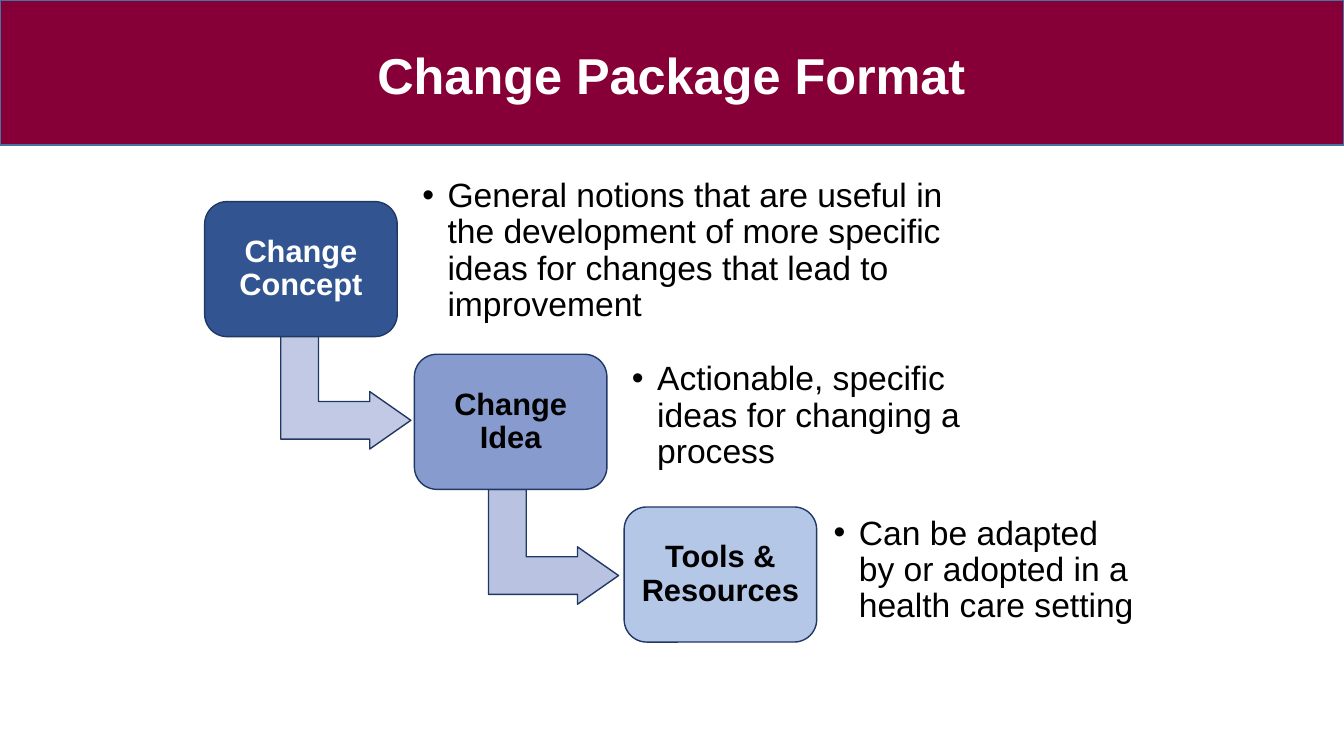
from lxml import etree
from pptx import Presentation
from pptx.dml.color import RGBColor
from pptx.enum.shapes import MSO_SHAPE
from pptx.enum.text import MSO_ANCHOR, PP_ALIGN
from pptx.oxml.ns import qn
from pptx.util import Inches, Pt

RECTANGLE = MSO_SHAPE.RECTANGLE
ROUNDED = MSO_SHAPE.ROUNDED_RECTANGLE
BENT_ARROW = MSO_SHAPE.BENT_UP_ARROW
MIDDLE = MSO_ANCHOR.MIDDLE
CENTER, LEFT = PP_ALIGN.CENTER, PP_ALIGN.LEFT

WHITE = RGBColor(0xFF, 0xFF, 0xFF)
BLACK = RGBColor(0x00, 0x00, 0x00)
MAROON = RGBColor(0x86, 0x00, 0x37)
BANNER_LINE = RGBColor(0x43, 0x73, 0x9E)
NAVY = RGBColor(0x20, 0x38, 0x64)
DARK_BLUE = RGBColor(0x32, 0x54, 0x91)
MID_BLUE = RGBColor(0x87, 0x9B, 0xCE)
LIGHT_BLUE = RGBColor(0xB4, 0xC7, 0xE7)
PALE_ARROW = RGBColor(0xC1, 0xC9, 0xE4)
SOFT_ARROW = RGBColor(0xB9, 0xC2, 0xE1)

# Staircase grid, in inches
FIRST_LEFT, FIRST_TOP = 2.03, 2
STEP_RIGHT, STEP_DOWN = 2.08, 1.515
BOX_WIDTH, BOX_HEIGHT = 1.91, 1.34
ARROW_WIDTH, ARROW_HEIGHT = 1.14, 1.29

# Label, box fill, label colour, description, description frame
STEPS = [
    ("Change Concept", DARK_BLUE, WHITE,
     "General notions that are useful in the development of more specific "
     "ideas for changes that lead to improvement", (4.09, 1.95, 5.59, 1.08)),
    ("Change Idea", MID_BLUE, BLACK,
     "Actionable, specific ideas for changing a process",
     (6.17, 3.59, 3.66, 1.08)),
    ("Tools & Resources", LIGHT_BLUE, BLACK,
     "Can be adapted by or adopted in a health care setting",
     (8.17, 4.95, 3.22, 1.42)),
]
# Left, top and fill of the arrow that leaves each step
ARROWS = [(2.86, 3.24, PALE_ARROW), (4.92, 4.78, SOFT_ARROW)]

deck = Presentation()
deck.slide_width, deck.slide_height = Inches(13.33), Inches(7.5)
page = deck.slides.add_slide(deck.slide_layouts[6])


def add_outlined(kind, frame, fill, line):
    shape = page.shapes.add_shape(kind, *map(Inches, frame))
    shape.shadow.inherit = False
    shape.fill.solid()
    shape.fill.fore_color.rgb = fill
    shape.line.color.rgb = line
    shape.line.width = Pt(1)
    return shape


def write(box, text, size, color, bold, align, inset):
    """Put one vertically centred paragraph into a box and return it."""
    frame = box.text_frame
    frame.text = text
    frame.word_wrap = True
    frame.vertical_anchor = MIDDLE
    frame.margin_left = frame.margin_right = Inches(inset)
    frame.margin_top = frame.margin_bottom = Inches(min(inset, 0.1))
    para = frame.paragraphs[0]
    para.alignment = align
    para.line_spacing = 0.9
    font = para.runs[0].font
    font.name, font.size, font.bold = "Arial", Pt(size), bold
    font.color.rgb = color
    return para


add_outlined(RECTANGLE, (0, 0, 13.33, 1.44), MAROON, BANNER_LINE)

for index, (label, fill, label_color, description, frame) in enumerate(STEPS):
    if index < len(ARROWS):
        left, top, arrow_fill = ARROWS[index]
        arrow = add_outlined(BENT_ARROW, (left, top, ARROW_WIDTH, ARROW_HEIGHT),
                             arrow_fill, NAVY)
        arrow.rotation = 90
        for number, value in enumerate((0.328, 0.25, 0.358)):
            arrow.adjustments[number] = value

    box = add_outlined(ROUNDED, (FIRST_LEFT + index * STEP_RIGHT,
                                 FIRST_TOP + index * STEP_DOWN,
                                 BOX_WIDTH, BOX_HEIGHT), fill, NAVY)
    write(box, label, 22, label_color, True, CENTER, 0.09)

    note = page.shapes.add_textbox(*map(Inches, frame))
    para = write(note, description, 24, BLACK, False, LEFT, 0.1)
    properties = para._p.get_or_add_pPr()
    properties.set("marL", str(Inches(0.25)))
    properties.set("indent", str(-Inches(0.25)))
    etree.SubElement(properties, qn("a:buFont")).set("typeface", "Arial")
    etree.SubElement(properties, qn("a:buChar")).set("char", "•")

title = page.shapes.add_textbox(*map(Inches, (2.35, 0.05, 8.62, 1.45)))
write(title, "Change Package Format", 36, WHITE, True, CENTER, 0.1)

deck.save("out.pptx")
